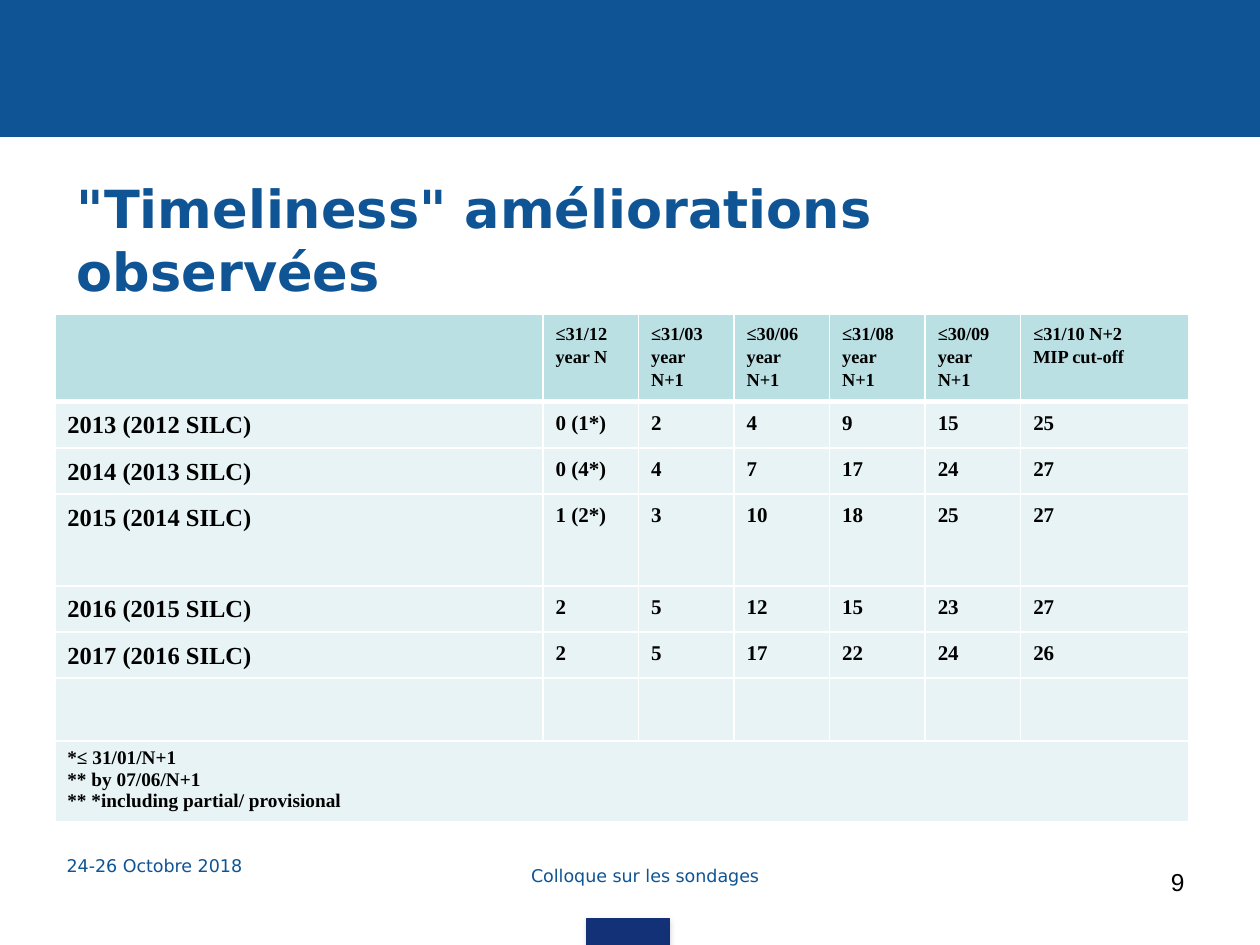
import pptx
import pptx.util
import pptx.dml.color
import pptx.enum.shapes
import pptx.enum.text
import pptx.oxml
import pptx.oxml.ns

Pt = pptx.util.Pt
RGB = pptx.dml.color.RGBColor
ALIGN = pptx.enum.text.PP_ALIGN
ANCHOR = pptx.enum.text.MSO_ANCHOR
NS = pptx.oxml.ns.nsdecls("a")

BLUE = RGB(0x0F, 0x54, 0x94)
NAVY = RGB(0x13, 0x31, 0x76)
BLACK = RGB(0x00, 0x00, 0x00)
HEADER_FILL = RGB(0xBB, 0xE0, 0xE3)
BODY_FILL = RGB(0xE7, 0xF3, 0xF4)


def write(tf, text, font="DejaVu Sans", size=10, color=BLUE, bold=False,
          align=ALIGN.LEFT, spacing=None, after=None):
    tf.word_wrap = True
    tf.text = text
    for p in tf.paragraphs:
        p.alignment = align
        p.line_spacing = spacing
        p.space_after = after
        for r in p.runs:
            r.font.name = font
            r.font.size = Pt(size)
            r.font.bold = bold
            r.font.color.rgb = color


def set_borders(cell, top, bottom):
    tcPr = cell._tc.get_or_add_tcPr()
    for side, width in (("L", 1), ("R", 1), ("T", top), ("B", bottom)):
        tcPr.append(pptx.oxml.parse_xml(
            f'<a:ln{side} {NS} w="{Pt(width)}"><a:solidFill>'
            f'<a:srgbClr val="FFFFFF"/></a:solidFill></a:ln{side}>'))


prs = pptx.Presentation()
prs.slide_width, prs.slide_height = Pt(720), Pt(540)
s = prs.slides.add_slide(prs.slide_layouts[5])

for x, y, w, h, color in ((0, 0, 720, 78, BLUE), (335.5, 525, 47, 15, NAVY)):
    sp = s.shapes.add_shape(pptx.enum.shapes.MSO_SHAPE.RECTANGLE,
                            Pt(x), Pt(y), Pt(w), Pt(h))
    sp.shadow.inherit = False
    sp.fill.solid()
    sp.fill.fore_color.rgb = color
    sp.line.color.rgb = color
    sp.line.width = Pt(0.75)

effects = sp._element.spPr.find(pptx.oxml.ns.qn("a:effectLst"))
effects.append(pptx.oxml.parse_xml(
    f'<a:outerShdw {NS} blurRad="{Pt(3.1)}" dist="{Pt(1.8)}" dir="5400000">'
    '<a:srgbClr val="808080"><a:alpha val="35000"/></a:srgbClr></a:outerShdw>'))

title = s.shapes.title
title.left, title.top, title.width, title.height = Pt(36.7), Pt(100), Pt(648), Pt(73.5)
title.text_frame.auto_size = pptx.enum.text.MSO_AUTO_SIZE.NONE
title.text_frame.vertical_anchor = ANCHOR.MIDDLE
write(title.text_frame, '"Timeliness" améliorations observées', size=30, bold=True)

rows = [
    ["", "≤31/12 year N", "≤31/03 year N+1", "≤30/06 year N+1",
     "≤31/08 year N+1", "≤30/09 year N+1", "≤31/10 N+2\vMIP cut-off"],
    ["2013 (2012 SILC)", "0 (1*)", "2", "4", "9", "15", "25"],
    ["2014 (2013 SILC)", "0 (4*)", "4", "7", "17", "24", "27"],
    ["2015 (2014 SILC)", "1 (2*)", "3", "10", "18", "25", "27"],
    ["2016 (2015 SILC)", "2", "5", "12", "15", "23", "27"],
    ["2017 (2016 SILC)", "2", "5", "17", "22", "24", "26"],
    [""] * 7,
    [""] * 7,
]
notes = "*≤ 31/01/N+1\n** by 07/06/N+1\n** *including partial/ provisional"
col_widths = [279] + [54.6] * 5 + [96]
row_heights = [50, 26.4, 26.4, 52.4, 26.4, 26.4, 36, 46]

table = s.shapes.add_table(len(rows), len(col_widths), Pt(31.3), Pt(179.6),
                           Pt(sum(col_widths)), Pt(sum(row_heights))).table
table.horz_banding = False
for col, width in zip(table.columns, col_widths):
    col.width = Pt(width)
for row, height in zip(table.rows, row_heights):
    row.height = Pt(height)

for i, values in enumerate(rows):
    for j, value in enumerate(values):
        cell = table.cell(i, j)
        set_borders(cell, top=3 if i == 1 else 1, bottom=3 if i == 0 else 1)
        cell.fill.solid()
        cell.fill.fore_color.rgb = HEADER_FILL if i == 0 else BODY_FILL
        if value:
            size = 10.5 if i == 0 else 14 if j == 0 else 12
            align = ALIGN.LEFT if (i, j) == (0, 6) else ALIGN.JUSTIFY
            write(cell.text_frame, value, font="Times New Roman", size=size,
                  color=BLACK, bold=True, align=align, spacing=1.15, after=Pt(12))

notes_cell = table.cell(7, 0)
notes_cell.merge(table.cell(7, 6))
write(notes_cell.text_frame, notes, font="Times New Roman", size=11,
      color=BLACK, bold=True)

footers = [
    ("9", 516.2, 491.8, 167.8, 37.4, dict(font="Arial", size=14, color=BLACK, align=ALIGN.RIGHT)),
    ("Colloque sur les sondages", 226.8, 491, 283.7, 42.5, dict(align=ALIGN.CENTER)),
    ("24-26 Octobre 2018", 31, 485.3, 167.8, 37.4, {}),
]
for text, x, y, w, h, fmt in footers:
    tb = s.shapes.add_textbox(Pt(x), Pt(y), Pt(w), Pt(h))
    write(tb.text_frame, text, **fmt)

prs.save("out.pptx")
